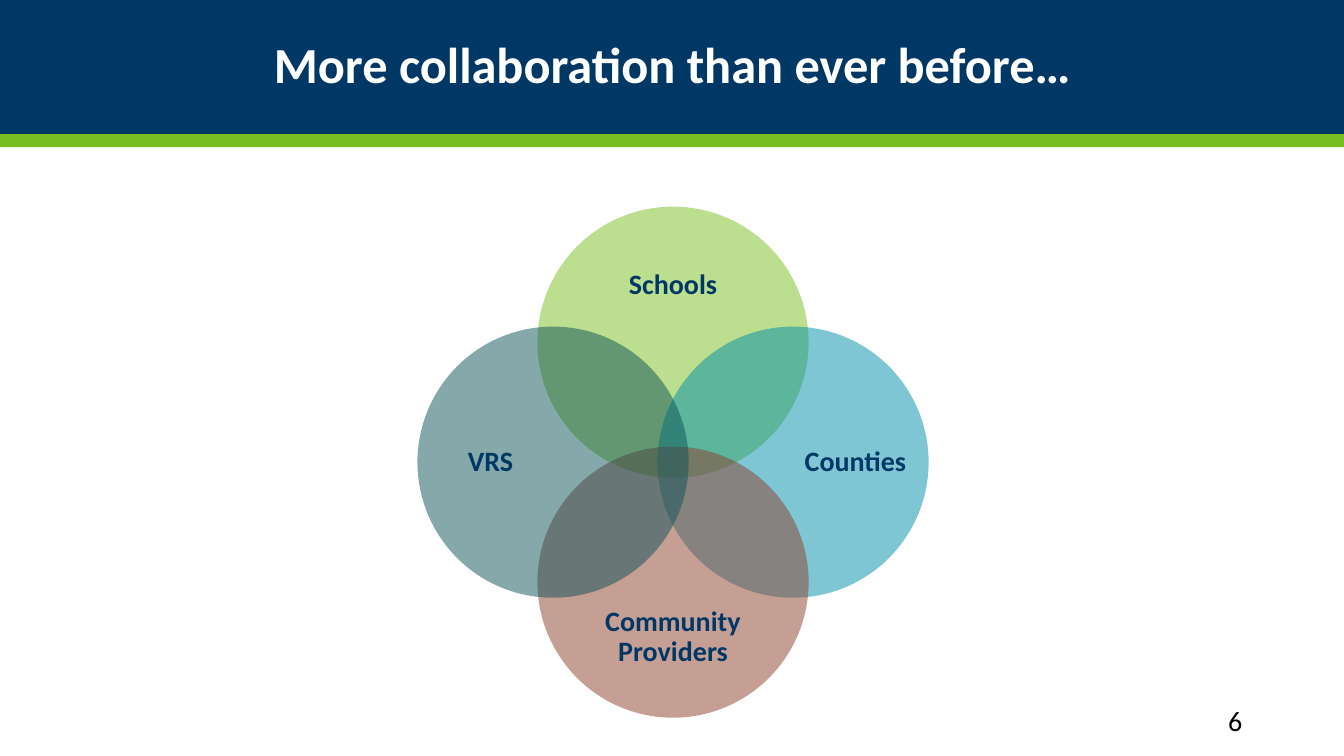
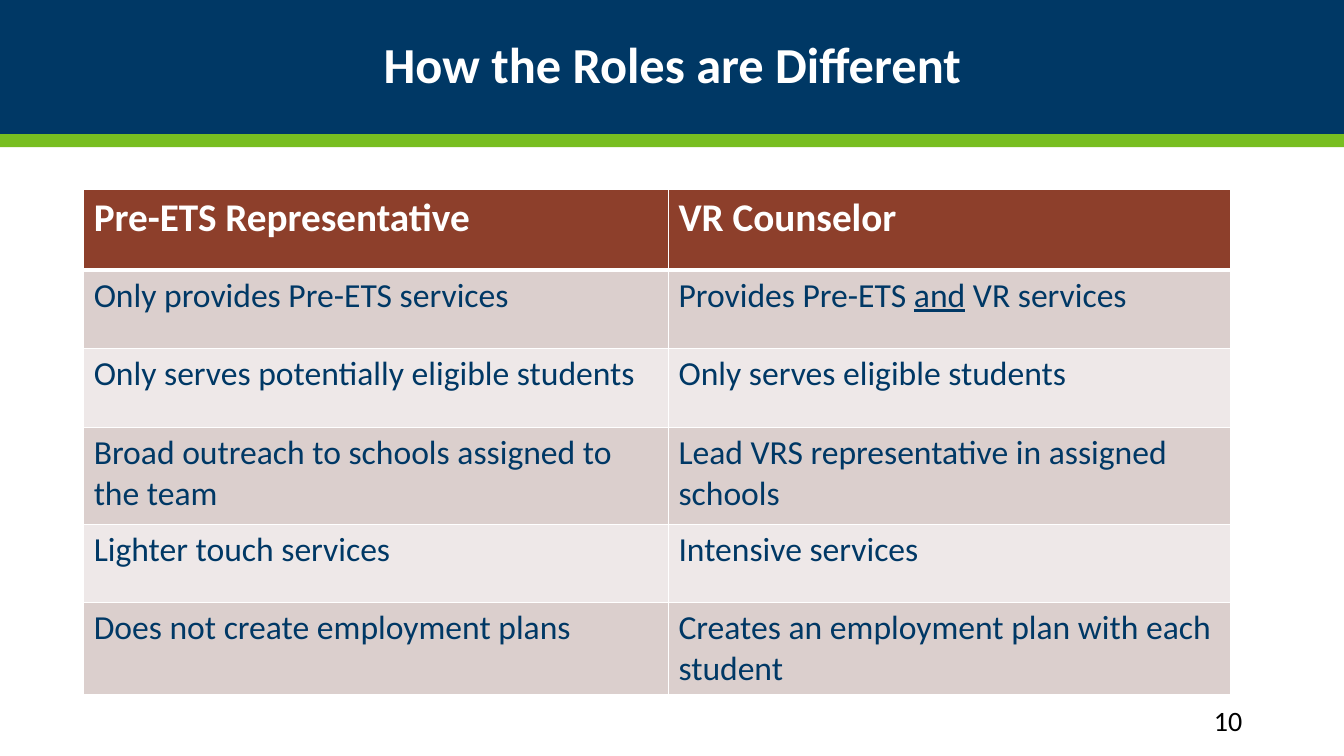
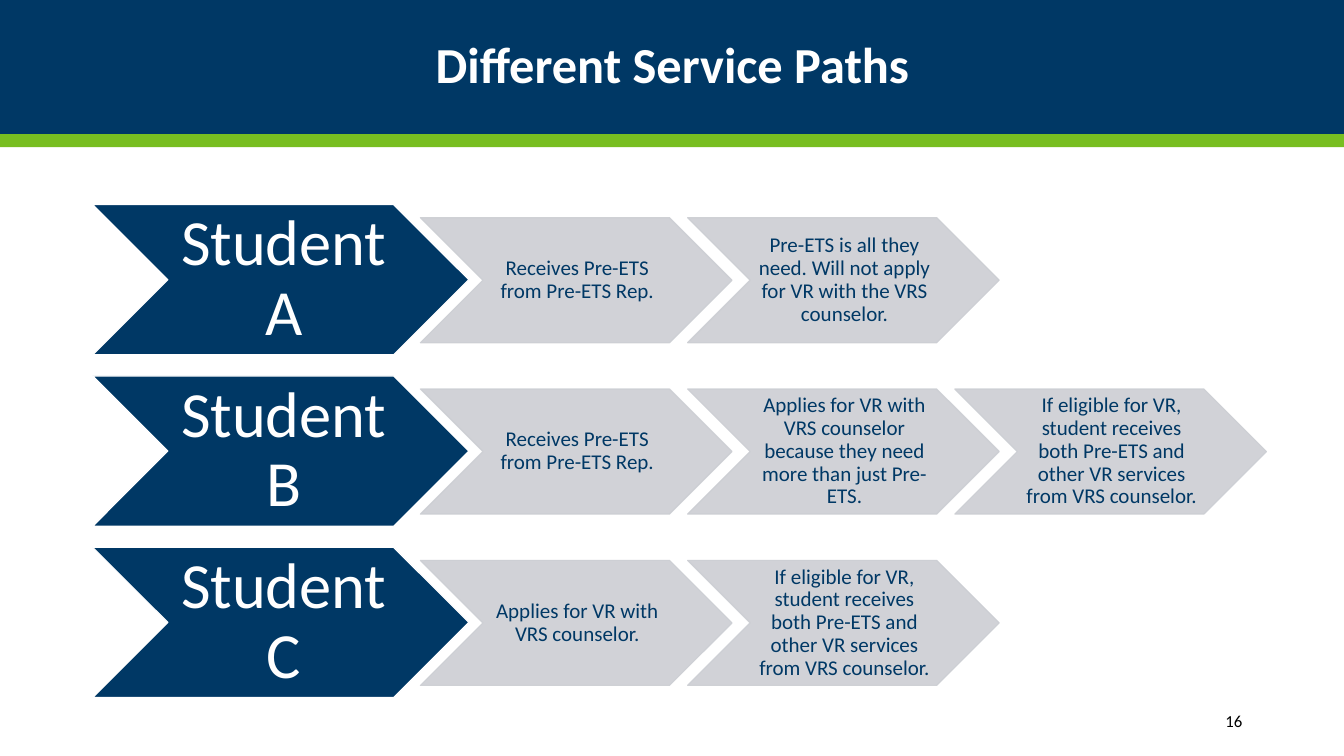
from dataclasses import dataclass

from pptx import Presentation
from pptx import util as u
from pptx.dml.color import RGBColor
from pptx.enum import shapes, text
from pptx.oxml import ns, xmlchemy


@dataclass(frozen=True)
class Theme:
    """Colours, font and type sizes of the deck."""
    navy: str = "003865"
    green: str = "78BE21"
    blue: str = "008EAA"
    rust: str = "8D3F2B"
    teal: str = "0D5257"
    grey: str = "CCCED3"
    rows: tuple = ("DBCFCD", "EEE8E8")
    white: str = "FFFFFF"
    black: str = "000000"
    font: str = "Calibri"
    title: int = 36
    label: int = 20
    table_head: int = 28
    table_body: int = 24
    student: int = 46
    step: int = 15
    number: int = 20
    small_number: int = 12


THEME = Theme()
MIDDLE, TOP = text.MSO_ANCHOR.MIDDLE, text.MSO_ANCHOR.TOP
CENTER, LEFT, RIGHT = text.PP_ALIGN.CENTER, text.PP_ALIGN.LEFT, text.PP_ALIGN.RIGHT
OVAL, CHEVRON, RECT = (shapes.MSO_SHAPE.OVAL, shapes.MSO_SHAPE.CHEVRON,
                       shapes.MSO_SHAPE.RECTANGLE)


def px(length):
    """Turn px, 100 to the inch, into EMU."""
    return u.Emu(length * 9144)


def box(*lengths):
    """Turn a left, top, width, height box into EMU."""
    return [px(length) for length in lengths]


def rgb(colour):
    """Read a hex colour."""
    return RGBColor.from_string(colour)


def style(frame, size, colour, bold=False, align=CENTER, spacing=0.9, anchor=MIDDLE):
    """Format all text of a frame."""
    frame.word_wrap = True
    frame.vertical_anchor = anchor
    for paragraph in frame.paragraphs:
        paragraph.alignment = align
        paragraph.line_spacing = spacing
        for run in paragraph.runs:
            run.font.name = THEME.font
            run.font.size = u.Pt(size)
            run.font.bold = bold
            run.font.color.rgb = rgb(colour)


def inset(frame, left, top, right, bottom):
    """Set the inner margins of a frame."""
    frame.margin_left, frame.margin_top = px(left), px(top)
    frame.margin_right, frame.margin_bottom = px(right), px(bottom)


def figure(slide, preset, place, fill, line=None, opacity=100):
    """Add a preset shape with a flat fill."""
    shape = slide.shapes.add_shape(preset, *box(*place))
    shape.shadow.inherit = False
    shape.fill.solid()
    shape.fill.fore_color.rgb = rgb(fill)
    if line:
        shape.line.color.rgb = rgb(line)
        shape.line.width = u.Pt(0.85)
    else:
        shape.line.fill.background()
    if opacity < 100:
        for colour in shape.element.spPr.iter(ns.qn("a:srgbClr")):
            alpha = xmlchemy.OxmlElement("a:alpha")
            alpha.set("val", str(opacity * 1000))
            colour.append(alpha)
    return shape


def textbox(slide, place, words):
    """Add a text box and return its frame."""
    frame = slide.shapes.add_textbox(*box(*place)).text_frame
    frame.text = words
    return frame


def brand_layout(layout, slide):
    """Place the title and move the two bands into the layout."""
    title = layout.placeholders[0]
    title.left, title.top, title.width, title.height = box(92, 17, 1150, 100)
    bands = [((0, 0, 1333, 133), THEME.navy), ((0, 133, 1333, 13), THEME.green)]
    for index, (place, colour) in enumerate(bands):
        band = figure(slide, RECT, place, colour).element
        band.nvSpPr.cNvPr.set("id", str(101 + index))
        layout.shapes.element.insert(2 + index, band)


def new_slide(deck, heading, number, number_size=THEME.number):
    """Add a slide with its heading and page number."""
    layout = deck.slide_layouts[5]
    slide = deck.slides.add_slide(layout)
    if len(deck.slides) == 1:
        brand_layout(layout, slide)
    title = slide.shapes.title.text_frame
    title.text = heading
    style(title, THEME.title, THEME.white, bold=True)
    page = textbox(slide, (1082, 695, 160, 40), str(number))
    style(page, number_size, THEME.black, align=RIGHT, spacing=1)
    return slide


def venn(slide, parties):
    """Add overlapping circles around a centre, each with a label."""
    diameter, offset = 269, 119
    for name, colour, (across, down), label_place in parties:
        place = (533 + offset * across, 324 + offset * down, diameter, diameter)
        figure(slide, OVAL, place, colour, opacity=50)
        label = textbox(slide, label_place, name)
        inset(label, 0, 0, 0, 0)
        style(label, THEME.label, THEME.navy, bold=True)


def cell_borders(cell, bottom):
    """Draw white borders around a cell."""
    properties = cell._tc.get_or_add_tcPr()
    for side, width in (("L", 1), ("R", 1), ("T", 1), ("B", bottom)):
        line = xmlchemy.OxmlElement(f"a:ln{side}")
        line.set("w", str(u.Pt(width)))
        fill = xmlchemy.OxmlElement("a:solidFill")
        colour = xmlchemy.OxmlElement("a:srgbClr")
        colour.set("val", THEME.white)
        fill.append(colour)
        line.append(fill)
        properties.append(line)


def fill_cell(cell, words, header, fill):
    """Write a cell, underlining words between underscores."""
    cell_borders(cell, 3 if header else 1)
    cell.fill.solid()
    cell.fill.fore_color.rgb = rgb(fill)
    paragraph = cell.text_frame.paragraphs[0]
    for index, part in enumerate(words.split("_")):
        run = paragraph.add_run()
        run.text = part
        if index % 2:
            run.font.underline = True
    style(cell.text_frame, THEME.table_head if header else THEME.table_body,
          THEME.white if header else THEME.navy, header, LEFT, 1, TOP)


def comparison(slide, place, widths, heights, rows):
    """Add a table with a header row and alternating body rows."""
    table = slide.shapes.add_table(len(rows), len(widths), *box(*place)).table
    for column, width in zip(table.columns, widths):
        column.width = px(width)
    for index, (height, words) in enumerate(zip(heights, rows)):
        table.rows[index].height = px(height)
        fill = THEME.rows[(index - 1) % 2] if index else THEME.rust
        for column, entry in enumerate(words):
            fill_cell(table.cell(index, column), entry, index == 0, fill)


def service_path(slide, top, student, steps):
    """Add a student chevron followed by its step chevrons."""
    head = figure(slide, CHEVRON, (92, top, 373, 149), THEME.navy, THEME.white).text_frame
    head.text = student
    inset(head, 6, 3, 0, 3)
    style(head, THEME.student, THEME.white)
    for index, words in enumerate(steps):
        place = (417 + 265 * index, top + 13, 309, 124)
        step = figure(slide, CHEVRON, place, THEME.grey, THEME.grey, 90).text_frame
        step.text = words
        inset(step, 2, 1, 0, 1)
        style(step, THEME.step, THEME.navy)


def main():
    """Build the deck."""
    deck = Presentation()
    deck.slide_width, deck.slide_height = px(1333), px(750)

    collaboration = new_slide(deck, "More collaboration than ever before…", 6)
    venn(collaboration, [
        ("Schools", THEME.green, (0, -1), (564, 241, 207, 85)),
        ("Counties", THEME.blue, (1, 0), (797, 355, 103, 207)),
        ("Community Providers", THEME.rust, (0, 1), (564, 590, 207, 85)),
        ("VRS", THEME.teal, (-1, 0), (435, 355, 103, 207)),
    ])

    roles = new_slide(deck, "How the Roles are Different", 10)
    comparison(roles, (83, 188, 1138, 501), (580, 558), (80, 78, 78, 96, 78, 91), [
        ("Pre-ETS Representative", "VR Counselor"),
        ("Only provides Pre-ETS services", "Provides Pre-ETS _and_ VR services"),
        ("Only serves potentially eligible students", "Only serves eligible students"),
        ("Broad outreach to schools assigned to the team",
         "Lead VRS representative in assigned schools"),
        ("Lighter touch services", "Intensive services"),
        ("Does not create employment plans",
         "Creates an employment plan with each student"),
    ])

    paths = new_slide(deck, "Different Service Paths", 16, THEME.small_number)
    receives = "Receives Pre-ETS from Pre-ETS Rep."
    eligible = ("If eligible for VR, student receives both Pre-ETS "
                "and other VR services from VRS counselor.")
    students = [
        ("Student A", [receives, "Pre-ETS is all they need. Will not apply for VR "
                                 "with the VRS counselor."]),
        ("Student B", [receives, "Applies for VR with VRS counselor because they "
                                 "need more than just Pre-ETS.", eligible]),
        ("Student C", ["Applies for VR with VRS counselor.", eligible]),
    ]
    for index, (student, steps) in enumerate(students):
        service_path(paths, 203 + 170 * index, student, steps)

    deck.save("out.pptx")


if __name__ == "__main__":
    main()
